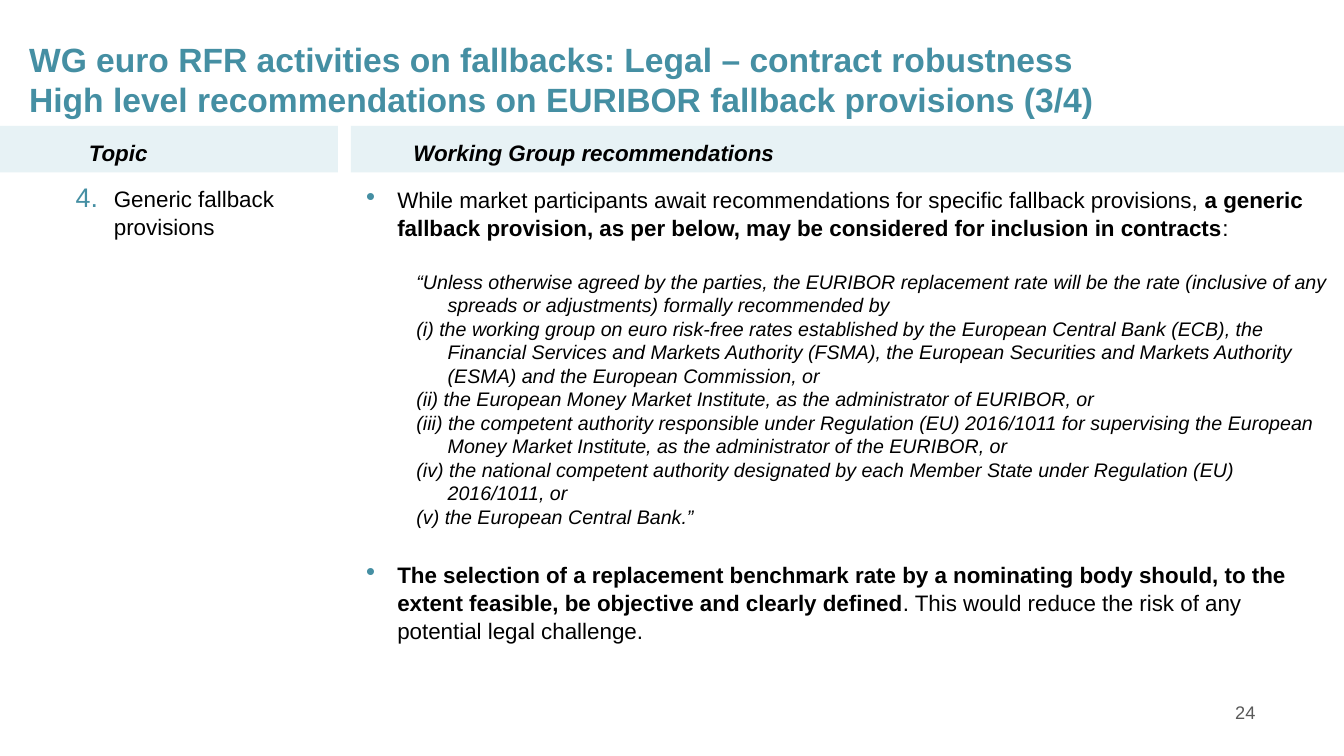
"""Build the slide on EURIBOR generic fallback provisions."""
from lxml import etree
from pptx import Presentation
from pptx.dml.color import RGBColor
from pptx.enum.shapes import MSO_SHAPE
from pptx.enum.text import MSO_ANCHOR, PP_ALIGN
from pptx.oxml.ns import qn
from pptx.util import Inches, Pt

BAR = MSO_SHAPE.ROUNDED_RECTANGLE
TOP, MIDDLE = MSO_ANCHOR.TOP, MSO_ANCHOR.MIDDLE
LEFT, RIGHT = PP_ALIGN.LEFT, PP_ALIGN.RIGHT
TEAL = RGBColor(0x45, 0x8F, 0xA3)
PALE = RGBColor(0xBD, 0xDB, 0xE3)
BLACK = RGBColor(0, 0, 0)
GREY = RGBColor(0x59, 0x59, 0x59)

prs = Presentation()
prs.slide_width, prs.slide_height = Inches(13.33), Inches(7.5)
s = prs.slides.add_slide(prs.slide_layouts[6])


def add_box(x, y, w, h, margins=(0.04, 0.05, 0, 0.05), anchor=TOP):
    tf = s.shapes.add_textbox(Inches(x), Inches(y), Inches(w), Inches(h)).text_frame
    tf.word_wrap = True
    tf.vertical_anchor = anchor
    tf.margin_left, tf.margin_top, tf.margin_right, tf.margin_bottom = map(Inches, margins)
    return tf


def add_par(tf, runs, size, color=BLACK, italic=False, line=20, before=0,
            indent=None, bullet=None, align=LEFT):
    p = tf.paragraphs[0]
    if p.runs:
        p = tf.add_paragraph()
    pPr = p._p.get_or_add_pPr()
    if indent:
        left, hang = indent
        pPr.set("marL", str(Inches(left)))
        pPr.set("indent", str(-Inches(hang)))
    if bullet:
        clr = etree.SubElement(pPr, qn("a:buClr"))
        etree.SubElement(clr, qn("a:srgbClr"), val=str(TEAL))
        etree.SubElement(pPr, qn("a:buSzPct"), val="120000")
        tag, attrs = bullet
        etree.SubElement(pPr, qn(tag), **attrs)
    p.alignment = align
    p.line_spacing = Pt(line)
    p.space_before = Pt(before)
    for text, bold in runs:
        r = p.add_run()
        r.text = text
        r.font.color.rgb = color
        font = {"name": "Arial", "size": Pt(size), "bold": bold, "italic": italic}
        for name, value in font.items():
            setattr(r.font, name, value)


headers = [
    (0, 3.35, 0.84, 2.25, "Topic"),
    (3.48, 9.85, 4.06, 4.34, "Working Group recommendations"),
]
for bar_x, bar_w, text_x, text_w, label in headers:
    bar = s.shapes.add_shape(BAR, Inches(bar_x), Inches(1.25), Inches(bar_w), Inches(0.46))
    bar.adjustments[0] = 0
    bar.shadow.inherit = False
    bar.line.fill.background()
    bar.fill.solid()
    bar.fill.fore_color.rgb = PALE
    color = bar._element.spPr.find(qn("a:solidFill"))[0]
    etree.SubElement(color, qn("a:alpha"), val="35000")
    add_par(add_box(text_x, 1.32, text_w, 0.32), [(label, True)], 16, italic=True)

dot = ("a:buChar", {"char": "•"})
number = ("a:buAutoNum", {"type": "arabicPeriod", "startAt": "4"})
clauses = [
    "“Unless otherwise agreed by the parties, the EURIBOR replacement rate will be the rate "
    "(inclusive of any spreads or adjustments) formally recommended by",
    "(i) the working group on euro risk-free rates established by the European Central Bank "
    "(ECB), the Financial Services and Markets Authority (FSMA), the European Securities and "
    "Markets Authority (ESMA) and the European Commission, or",
    "(ii) the European Money Market Institute, as the administrator of EURIBOR, or",
    "(iii) the competent authority responsible under Regulation (EU) 2016/1011 for supervising "
    "the European Money Market Institute, as the administrator of the EURIBOR, or",
    "(iv) the national competent authority designated by each Member State under Regulation "
    "(EU) 2016/1011, or",
    "(v) the European Central Bank.”",
]
tf = add_box(3.59, 1.79, 9.62, 0.65)
add_par(tf, [
    ("While market participants await recommendations for specific fallback provisions, ", False),
    ("a generic fallback provision, as per below, may be considered for inclusion in contracts", True),
    (":", False),
], 16, indent=(0.31, 0.31), bullet=dot)
for i, clause in enumerate(clauses):
    add_par(tf, [(clause, False)], 14, italic=True, line=16.8,
            before=0 if i else 20, indent=(0.81, 0.31))
add_par(tf, [
    ("The selection of a replacement benchmark rate by a nominating body should, to the extent "
     "feasible, be objective and clearly defined", True),
    (". This would reduce the risk of any potential legal challenge.", False),
], 16, before=22.8, indent=(0.31, 0.31), bullet=dot)

tf = add_box(0.71, 1.78, 2.53, 2.01)
add_par(tf, [("Generic fallback provisions", False)], 16, indent=(0.38, 0.38), bullet=number)

tf = add_box(0.19, 0.34, 12.43, 1.72, margins=(0.1, 0.05, 0.1, 0.05))
for title in (
    "WG euro RFR activities on fallbacks: Legal – contract robustness",
    "High level recommendations on EURIBOR fallback provisions (3/4)",
):
    add_par(tf, [(title, True)], 24, TEAL, line=28.6)

tf = add_box(9.55, 6.87, 3, 0.4, margins=(0.1, 0.05, 0.1, 0.05), anchor=MIDDLE)
add_par(tf, [("24", False)], 13, GREY, line=15.5, align=RIGHT)

prs.save("out.pptx")
